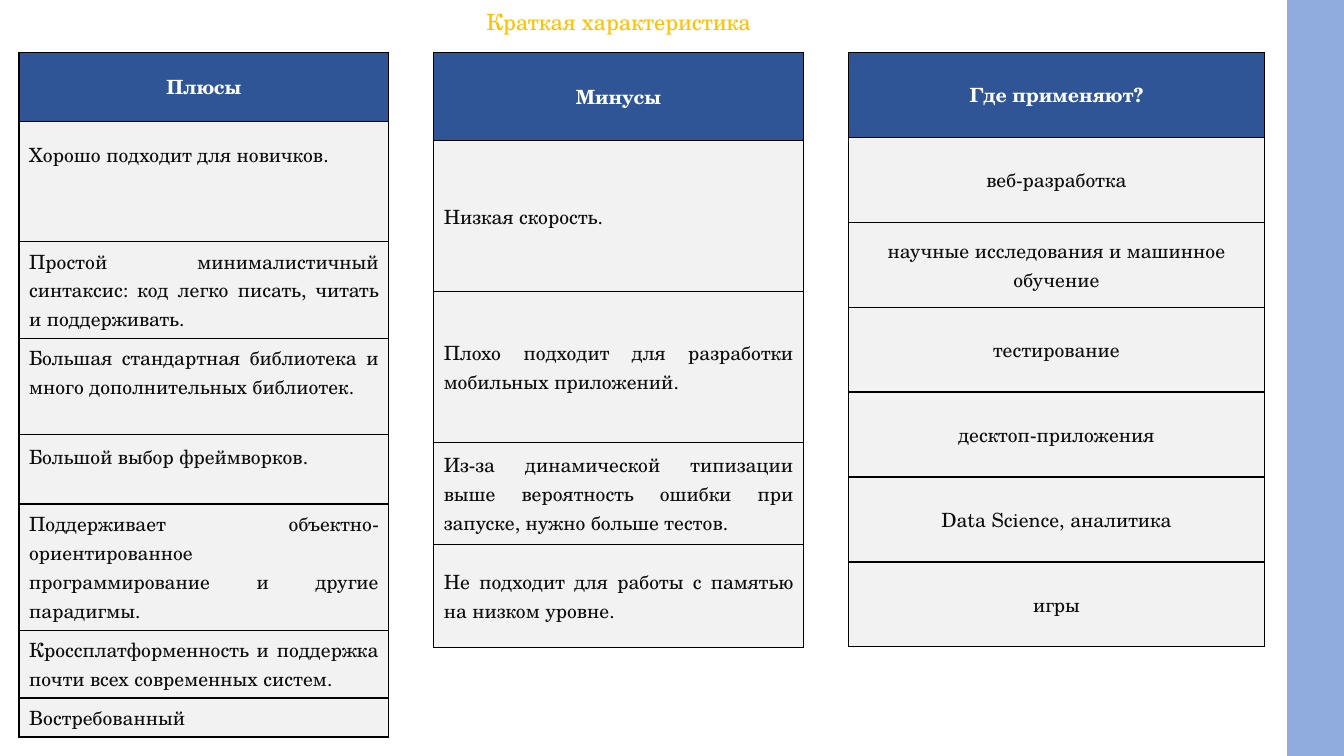
"""Build a slide with three tables: strengths, weaknesses and areas of use."""
from lxml import etree
from pptx import Presentation
from pptx.dml.color import RGBColor
from pptx.enum.shapes import MSO_SHAPE
from pptx.enum.text import MSO_ANCHOR, PP_ALIGN
from pptx.oxml.ns import qn
from pptx.util import Cm, Pt

FONT = "TeX Gyre Schola"
RECT = MSO_SHAPE.RECTANGLE
TOP, MIDDLE = MSO_ANCHOR.TOP, MSO_ANCHOR.MIDDLE
CENTER, JUSTIFY = PP_ALIGN.CENTER, PP_ALIGN.JUSTIFY


def rgb(value):
    return RGBColor.from_string(value)


def format_text(tf, align, size, color, bold=False):
    for p in tf.paragraphs:
        p.alignment = align
        for r in p.runs:
            r.font.name = FONT
            r.font.size = Pt(size)
            r.font.bold = bold
            r.font.color.rgb = rgb(color)


prs = Presentation()
prs.slide_width, prs.slide_height = Cm(33.87), Cm(19.05)
s = prs.slides.add_slide(prs.slide_layouts[6])

stripe = s.shapes.add_shape(RECT, Cm(32.44), 0, Cm(1.43), prs.slide_height)
stripe.shadow.inherit = False
stripe.fill.solid()
stripe.fill.fore_color.rgb = rgb("8FAADC")
stripe.line.fill.background()

title = s.shapes.add_textbox(Cm(11.91), Cm(0.08), Cm(7.37), Cm(0.94))
title.text_frame.word_wrap = False
title.text_frame.text = "Краткая характеристика"
format_text(title.text_frame, CENTER, 16, "FFC000")

# Each row: text, height in cm, and a top margin in cm for text set at the top
tables = [
    (9.32, JUSTIFY, [
        ("Плюсы", 1.75, None),
        ("Хорошо подходит для новичков.", 3.02, 0.47),
        ("Простой минималистичный синтаксис: код легко писать, читать и поддерживать.", 2.43, None),
        ("Большая стандартная библиотека и много дополнительных библиотек.", 2.43, 0.13),
        ("Большой выбор фреймворков.", 1.75, 0.2),
        ("Поддерживает объектно-ориентированное программирование и другие парадигмы.", 3.18, None),
        ("Кроссплатформенность и поддержка почти всех современных систем.", 1.71, None),
        ("Востребованный", 0.98, None),
    ]),
    (9.32, JUSTIFY, [
        ("Минусы", 2.23, None),
        ("Низкая скорость.", 3.8, None),
        ("Плохо подходит для разработки мобильных приложений.", 3.8, None),
        ("Из-за динамической типизации выше вероятность ошибки при запуске, нужно больше тестов.", 2.58, None),
        ("Не подходит для работы с памятью на низком уровне.", 2.58, None),
    ]),
    (10.49, CENTER, [(text, 2.14, None) for text in (
        "Где применяют?",
        "веб-разработка",
        "научные исследования и машинное обучение",
        "тестирование",
        "десктоп-приложения",
        "Data Science, аналитика",
        "игры",
    )]),
]

left, gap = 0.48, 1.13
for width, align, rows in tables:
    height = sum(row[1] for row in rows)
    table = s.shapes.add_table(len(rows), 1, Cm(left), Cm(1.32), Cm(width), Cm(height)).table
    left += width + gap
    for i, (text, row_height, top_margin) in enumerate(rows):
        table.rows[i].height = Cm(row_height)
        cell = table.cell(i, 0)
        cell.text = text
        cell.vertical_anchor = MIDDLE
        if top_margin is not None:
            cell.vertical_anchor = TOP
            cell.margin_top = Cm(top_margin)
        header = i == 0
        format_text(cell.text_frame, CENTER if header else align, 14,
                    "FFFFFF" if header else "0D0D0D", header)
        tcPr = cell._tc.get_or_add_tcPr()
        for side in ("lnL", "lnR", "lnT", "lnB"):
            ln = etree.SubElement(tcPr, qn(f"a:{side}"), w=str(Pt(1)))
            fill = etree.SubElement(ln, qn("a:solidFill"))
            etree.SubElement(fill, qn("a:srgbClr"), val="000000")
        cell.fill.solid()
        cell.fill.fore_color.rgb = rgb("2F5597" if header else "F2F2F2")

prs.save("out.pptx")
